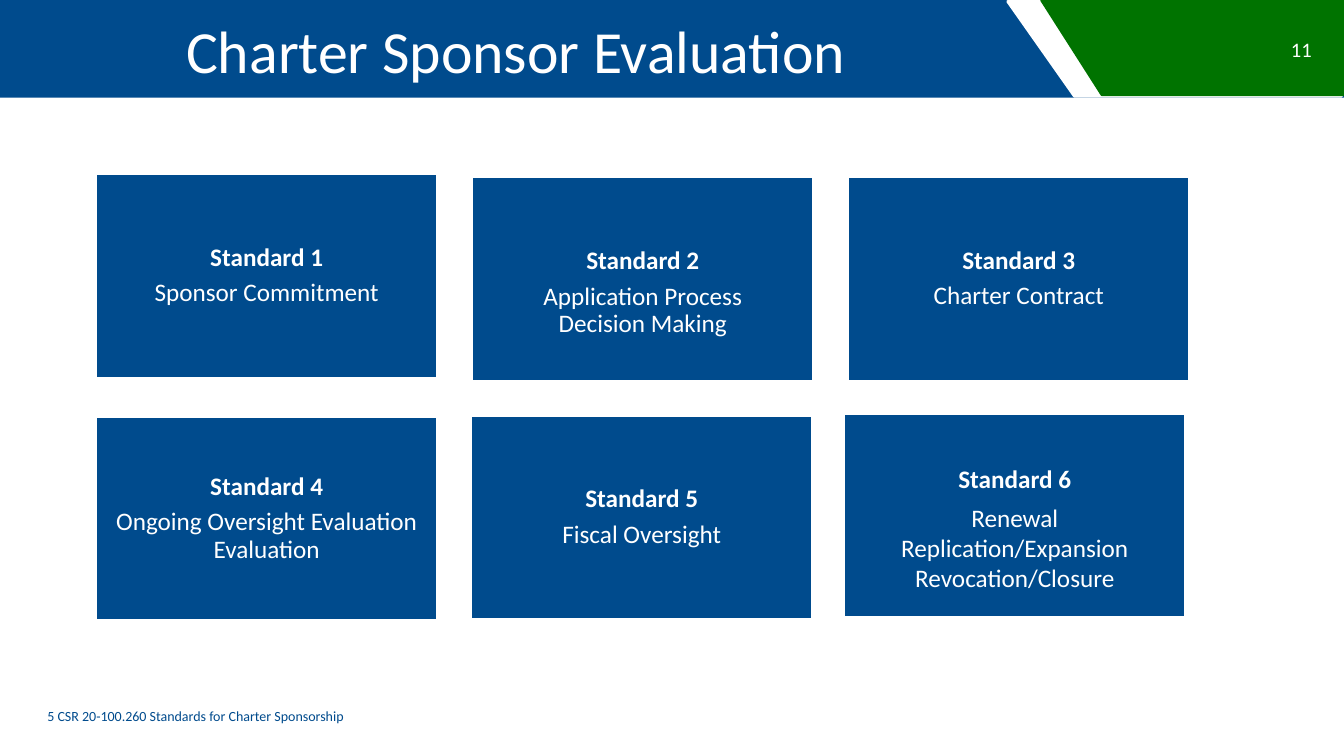
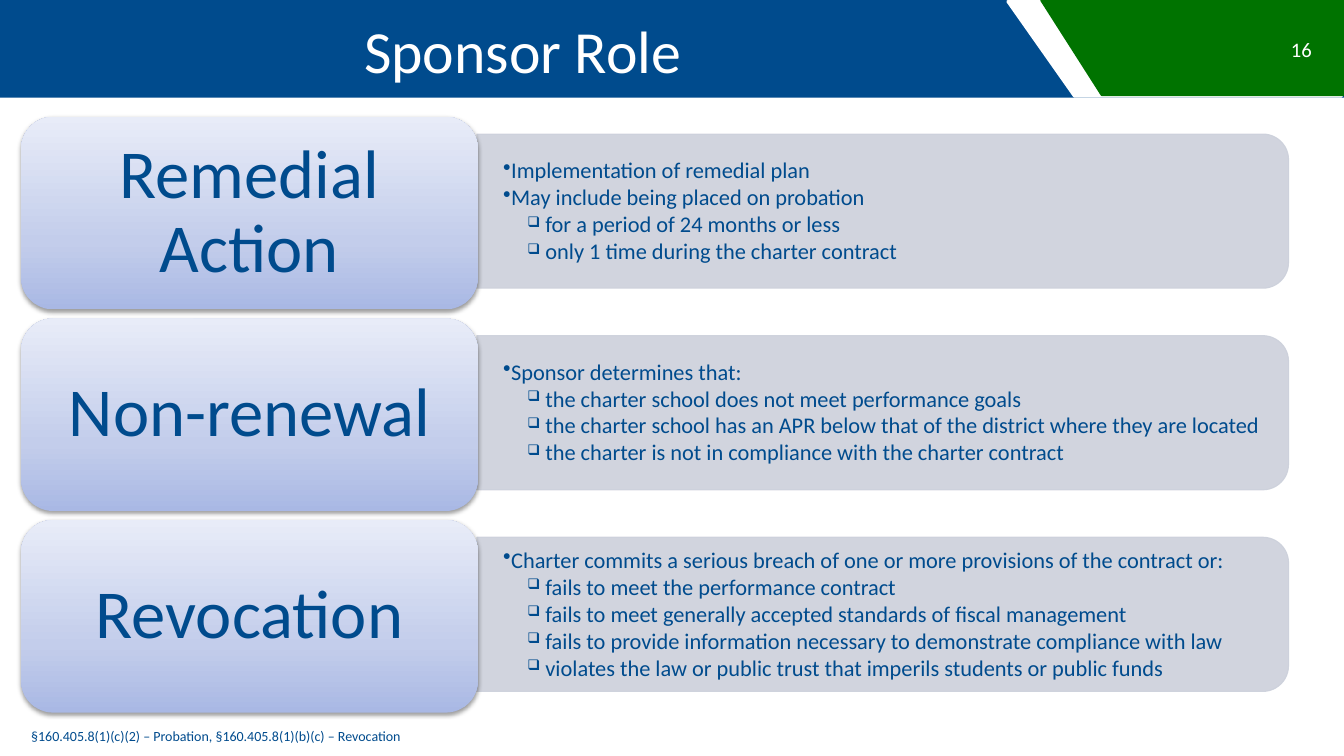
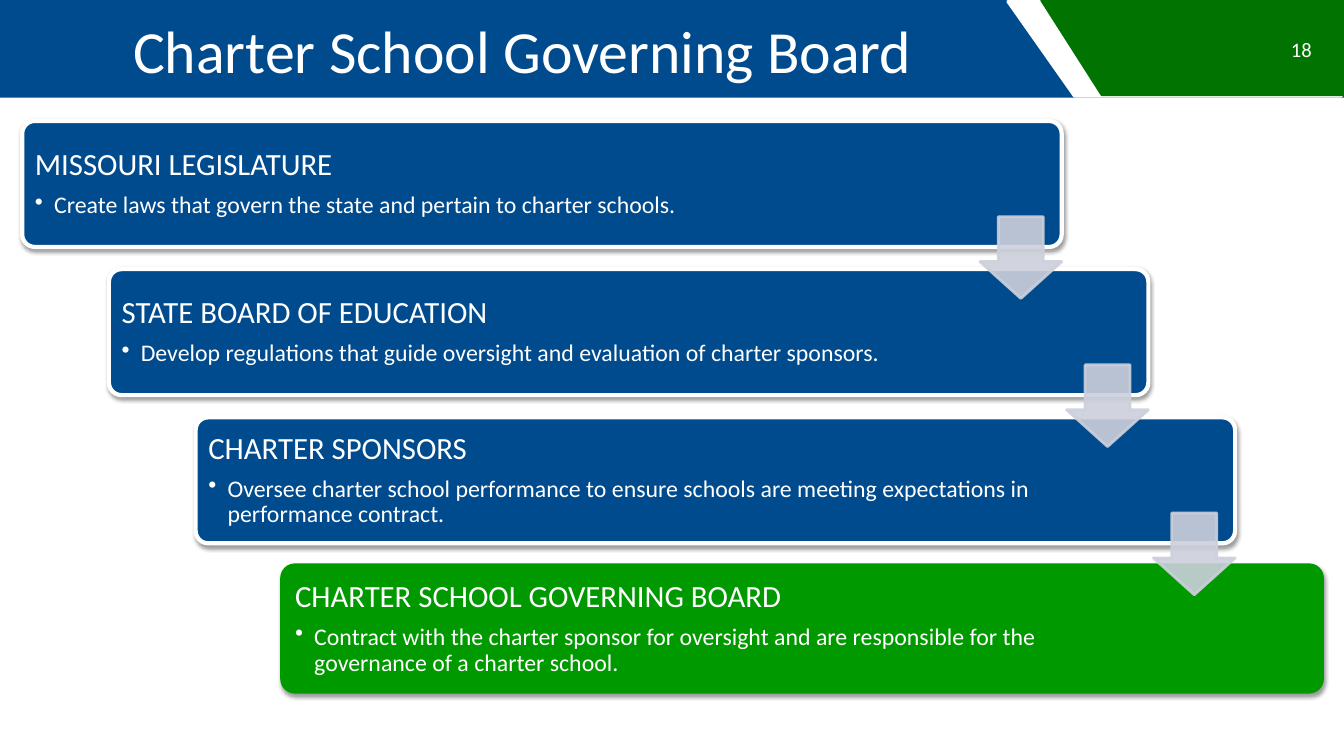
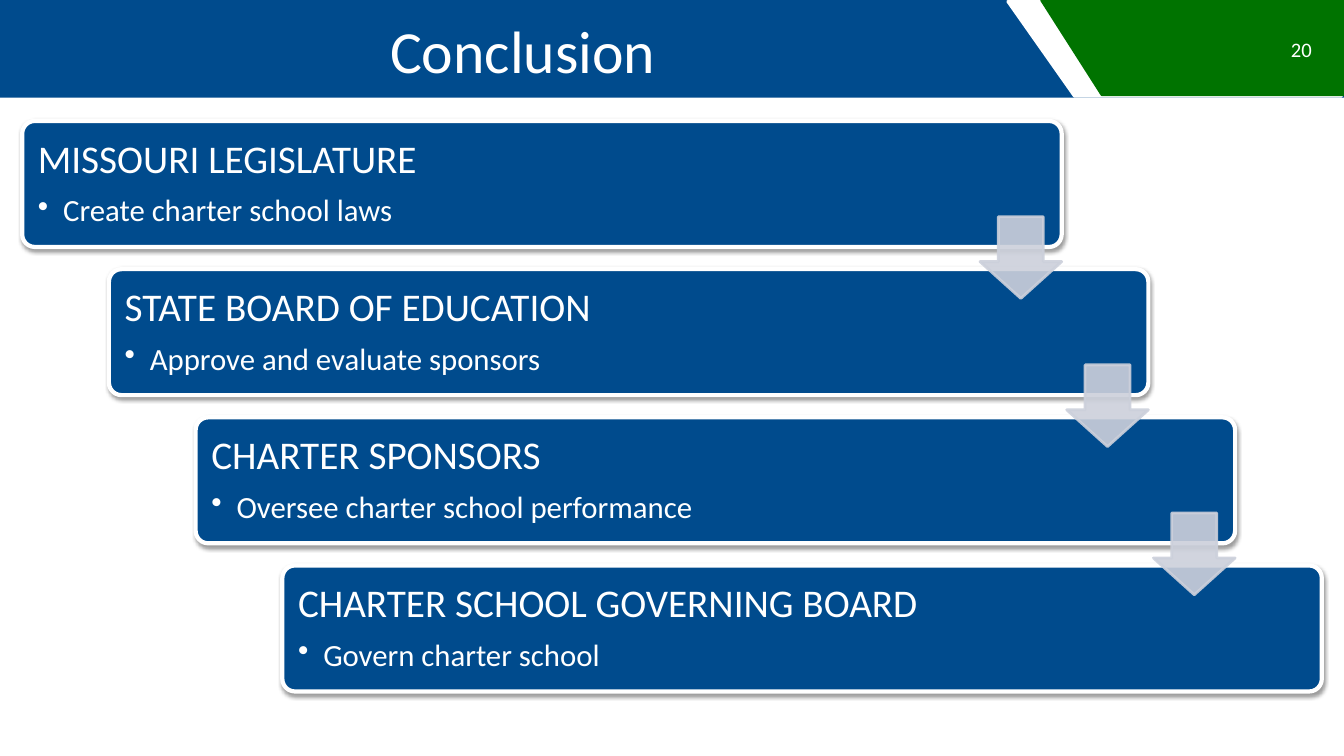
from dataclasses import dataclass

from lxml.etree import SubElement
from pptx import Presentation
from pptx.dml.color import RGBColor
from pptx.enum.shapes import MSO_SHAPE
from pptx.enum.text import MSO_ANCHOR, MSO_AUTO_SIZE, PP_ALIGN
from pptx.oxml.ns import qn
from pptx.util import Inches, Pt

# Shared look
FONT = "Calibri"
BLUE, WHITE, GREEN, BRIGHT_GREEN, GREY = "004B8D", "FFFFFF", "007300", "009900", "CCD0DB"
LABEL_GRADIENT = ((0, "A9B8E4"), (35, "C3CDEB"), (100, "E8ECF8"))
TITLE_AND_BODY, TITLE_ONLY = 1, 5


@dataclass(frozen=True)
class Box:
    left: float
    top: float
    width: float
    height: float

    def lengths(self) -> tuple:
        return tuple(Inches(v) for v in (self.left, self.top, self.width, self.height))


@dataclass(frozen=True)
class Standard:
    left: float
    top: float
    heading: str
    topics: tuple[str, ...]
    drop: float = 0  # extra room above the text
    spacing: float = 0.9


@dataclass(frozen=True)
class Outcome:
    label: str
    points: tuple[str, ...]
    details: tuple[str, ...]


@dataclass(frozen=True)
class Step:
    heading: str
    duty: str
    color: str = BLUE
    border: str = WHITE


@dataclass(frozen=True)
class StepStyle:
    heading_size: float
    duty_size: float
    inset: float
    hang: float


# Formatting helpers
def rgb(color: str) -> RGBColor:
    return RGBColor.from_string(color)


def set_alpha(fill, percent: int) -> None:
    color = fill._xPr.find(qn("a:solidFill"))[0]
    SubElement(color, qn("a:alpha")).set("val", str(percent * 1000))


def add_shadow(shape) -> None:
    effects = shape.element.spPr.find(qn("a:effectLst"))
    shadow = SubElement(effects, qn("a:outerShdw"), blurRad="40000", dist="20000",
                        dir="5400000", rotWithShape="0")
    color = SubElement(shadow, qn("a:srgbClr"), val="000000")
    SubElement(color, qn("a:alpha"), val="38000")


def fill_gradient(shape, stops: tuple) -> None:
    shape.fill.gradient()
    shape.fill.gradient_angle = 90
    stop_list = shape.element.spPr.find(qn("a:gradFill")).find(qn("a:gsLst"))
    for old in list(stop_list):
        stop_list.remove(old)
    for percent, color in stops:
        stop = SubElement(stop_list, qn("a:gs"), pos=str(percent * 1000))
        SubElement(stop, qn("a:srgbClr"), val=color)


def add_shape(slide, kind, box: Box, color: str, *, line: str | None = None,
              width: float = 2, alpha: int = 100, rotation: float = 0,
              adjustments: tuple[float, ...] = (), shadow: bool = False):
    shape = slide.shapes.add_shape(kind, *box.lengths())
    shape.shadow.inherit = False
    shape.rotation = rotation
    for i, value in enumerate(adjustments):
        shape.adjustments[i] = value
    shape.fill.solid()
    shape.fill.fore_color.rgb = rgb(color)
    if line:
        shape.line.color.rgb = rgb(line)
        shape.line.width = Pt(width)
    else:
        shape.line.fill.background()
    if alpha < 100:
        set_alpha(shape.fill, alpha)
        set_alpha(shape.line.fill, alpha)
    if shadow:
        add_shadow(shape)
    return shape


def set_frame(frame, *, insets: tuple | None = None, anchor=MSO_ANCHOR.MIDDLE):
    frame.word_wrap = True
    frame.auto_size = MSO_AUTO_SIZE.NONE
    frame.vertical_anchor = anchor
    if insets:
        (frame.margin_left, frame.margin_top,
         frame.margin_right, frame.margin_bottom) = (Inches(v) for v in insets)
    return frame


def write(frame, text: str, *, size: float, color: str = WHITE, bold: bool = False,
          align=PP_ALIGN.LEFT, spacing: float = 1, after: float = 0, level: int = 0,
          bullet: str = "", bullet_percent: int = 100,
          indent: float = 0, hang: float = 0) -> None:
    """Fill the first empty paragraph of the frame, or add one."""
    paragraph = frame.paragraphs[0]
    if paragraph.runs:
        paragraph = frame.add_paragraph()
    props = paragraph._p.get_or_add_pPr()
    props.set("marL", str(Inches(indent)))
    props.set("indent", str(-Inches(hang)))
    if bullet:
        SubElement(props, qn("a:buSzPct"), val=str(bullet_percent * 1000))
        SubElement(props, qn("a:buChar"), char=bullet)
    else:
        SubElement(props, qn("a:buNone"))
    paragraph.level = level
    paragraph.alignment = align
    paragraph.line_spacing = spacing
    paragraph.space_before = Pt(0)
    paragraph.space_after = Pt(after)
    run = paragraph.add_run()
    run.text = text
    run.font.name = FONT
    run.font.size = Pt(size)
    run.font.bold = bold
    run.font.color.rgb = rgb(color)


# Shared slide parts
def place(placeholder, box: Box) -> None:
    (placeholder.left, placeholder.top,
     placeholder.width, placeholder.height) = box.lengths()


def add_master_band(prs, slide) -> None:
    """Draw the header band and move it to the slide master."""
    slant = MSO_SHAPE.FLOWCHART_MANUAL_INPUT
    band = (
        add_shape(slide, MSO_SHAPE.RECTANGLE, Box(0, 0, 13.33, 0.97), BLUE),
        add_shape(slide, slant, Box(11.18, -1.17, 0.94, 3.31), WHITE, line=WHITE, rotation=270),
        add_shape(slide, slant, Box(11.36, -1.03, 0.94, 3), GREEN, line=GREEN, rotation=270),
    )
    for i, part in enumerate(band):
        part.element.nvSpPr.cNvPr.set("id", str(20 + i))
        prs.slide_master.shapes.element.insert(2 + i, part.element)


def add_slide(prs, layout: int, title: str, number: int):
    slide = prs.slides.add_slide(prs.slide_layouts[layout])
    heading = slide.shapes.title
    place(heading, Box(0.44, 0.06, 9.33, 0.86))
    write(set_frame(heading.text_frame), title, size=42.7,
          align=PP_ALIGN.CENTER, indent=0.16)
    page = slide.shapes.add_textbox(*Box(12.44, 0.29, 0.67, 0.4).lengths())
    write(set_frame(page.text_frame), str(number), size=14.7, align=PP_ALIGN.RIGHT)
    return slide


def add_citation(slide, text: str, box: Box, indent: float = 0) -> None:
    citation = slide.placeholders[1]
    place(citation, box)
    write(set_frame(citation.text_frame, anchor=MSO_ANCHOR.TOP), text,
          size=10, color=BLUE, indent=indent)


# Content parts
def add_standard(slide, standard: Standard) -> None:
    card = add_shape(slide, MSO_SHAPE.RECTANGLE,
                     Box(standard.left, standard.top, 3.39, 2.03), BLUE, line=WHITE)
    frame = set_frame(card.text_frame, insets=(0.07, 0.07 + standard.drop, 0.07, 0.07))
    write(frame, standard.heading, size=18, bold=True, align=PP_ALIGN.CENTER,
          spacing=0.9, after=6)
    for topic in standard.topics:
        write(frame, topic, size=18, align=PP_ALIGN.CENTER, spacing=standard.spacing)


def add_outcome(slide, outcome: Outcome, top: float) -> None:
    # The panel stands upright and is turned about its centre
    add_shape(slide, MSO_SHAPE.ROUND_2_SAME_RECTANGLE, Box(7.99, top - 3.09, 1.53, 8.05),
              GREY, line=GREY, width=0.75, alpha=90, rotation=90)
    details = slide.shapes.add_textbox(*Box(4.73, top + 0.25, 7.97, 1.38).lengths())
    frame = set_frame(details.text_frame, insets=(0.07, 0.03, 0.07, 0.03))
    for point in outcome.points:
        write(frame, point, size=16, color=BLUE, spacing=0.9, after=2,
              bullet="•", indent=0.27, hang=0.08)
    for detail in outcome.details:
        write(frame, detail, size=16, color=BLUE, spacing=0.9, after=2, level=1,
              bullet="❑", bullet_percent=65, indent=0.61, hang=0.18)
    label = add_shape(slide, MSO_SHAPE.ROUNDED_RECTANGLE, Box(0.21, top, 4.53, 1.91),
                      WHITE, shadow=True)
    fill_gradient(label, LABEL_GRADIENT)
    write(set_frame(label.text_frame, insets=(0.2, 0.1, 0.2, 0.1)), outcome.label,
          size=49, color=BLUE, align=PP_ALIGN.CENTER, spacing=0.9)


def add_staircase(slide, steps: tuple[Step, ...], style: StepStyle) -> None:
    corners = [(0.22 + 0.86 * i, 1.2 + 1.47 * i) for i in range(len(steps))]
    inset = style.inset
    for step, (left, top) in zip(steps, corners):
        card = add_shape(slide, MSO_SHAPE.ROUNDED_RECTANGLE, Box(left, top, 10.31, 1.25),
                         step.color, line=step.border, width=3,
                         adjustments=(0.1,), shadow=True)
        frame = set_frame(card.text_frame, insets=(inset, inset, 1.68 + inset, inset))
        write(frame, step.heading, size=style.heading_size, spacing=0.9,
              after=0.35 * style.heading_size)
        write(frame, step.duty, size=style.duty_size, spacing=0.9, level=1,
              bullet="•", indent=style.hang, hang=style.hang)
    for left, top in corners[:-1]:
        add_shape(slide, MSO_SHAPE.DOWN_ARROW, Box(left + 9.5, top + 0.95, 0.81, 0.81),
                  GREY, line=GREY, alpha=90, adjustments=(0.55, 0.45))


# Content
STANDARDS = (
    Standard(0.95, 1.72, "Standard 1", ("Sponsor Commitment",)),
    Standard(4.68, 1.75, "Standard 2", ("Application Process", "Decision Making"), 0.28),
    Standard(8.41, 1.75, "Standard 3", ("Charter Contract",)),
    Standard(0.95, 4.13, "Standard 4", ("Ongoing Oversight Evaluation", "Evaluation")),
    Standard(4.67, 4.12, "Standard 5", ("Fiscal Oversight",)),
    Standard(8.37, 4.1, "Standard 6",
             ("Renewal", "Replication/Expansion", "Revocation/Closure"), 0.28, 1),
)
OUTCOMES = (
    Outcome("Remedial Action",
            ("Implementation of remedial plan", "May include being placed on probation"),
            ("for a period of 24 months or less", "only 1 time during the charter contract")),
    Outcome("Non-renewal", ("Sponsor determines that:",),
            ("the charter school does not meet performance goals",
             "the charter school has an APR below that of the district where they are located",
             "the charter is not in compliance with the charter contract")),
    Outcome("Revocation",
            ("Charter commits a serious breach of one or more provisions of the contract or:",),
            ("fails to meet the performance contract",
             "fails to meet generally accepted standards of fiscal management",
             "fails to provide information necessary to demonstrate compliance with law",
             "violates the law or public trust that imperils students or public funds")),
)
BODIES = ("MISSOURI LEGISLATURE", "STATE BOARD OF EDUCATION", "CHARTER SPONSORS",
          "CHARTER SCHOOL GOVERNING BOARD")
DUTIES = (
    "Create laws that govern the state and pertain to charter schools.",
    "Develop regulations that guide oversight and evaluation of charter sponsors.",
    "Oversee charter school performance to ensure schools are meeting expectations in "
    "performance contract.",
    "Contract with the charter sponsor for oversight and are responsible for the "
    "governance of a charter school.",
)
SHORT_DUTIES = ("Create charter school laws", "Approve and evaluate sponsors",
                "Oversee charter school performance", "Govern charter school")


def main() -> None:
    prs = Presentation()
    prs.slide_width, prs.slide_height = Inches(13.33), Inches(7.5)

    # Standards
    evaluation = add_slide(prs, TITLE_AND_BODY, "Charter Sponsor Evaluation ", 11)
    add_master_band(prs, evaluation)
    for standard in STANDARDS:
        add_standard(evaluation, standard)
    add_citation(evaluation, "5 CSR 20-100.260 Standards for Charter Sponsorship",
                 Box(0.21, 6.97, 12.91, 0.42), indent=0.16)

    # Outcomes
    role = add_slide(prs, TITLE_AND_BODY, "Sponsor Role", 16)
    for i, outcome in enumerate(OUTCOMES):
        add_outcome(role, outcome, 1.16 + 2 * i)
    add_citation(role, "§160.405.8(1)(c)(2) – Probation, §160.405.8(1)(b)(c) – Revocation",
                 Box(0.21, 7.17, 10.78, 0.3))

    # Lines of authority, with the governing board in green
    board = add_slide(prs, TITLE_ONLY, "Charter School Governing Board", 18)
    steps = tuple(Step(*pair) for pair in zip(BODIES, DUTIES))
    highlighted = Step(BODIES[-1], DUTIES[-1], BRIGHT_GREEN, BRIGHT_GREEN)
    add_staircase(board, steps[:-1] + (highlighted,), StepStyle(22, 17, 0.09, 0.19))

    # Summary
    conclusion = add_slide(prs, TITLE_ONLY, "Conclusion", 20)
    add_staircase(conclusion, tuple(Step(*pair) for pair in zip(BODIES, SHORT_DUTIES)),
                  StepStyle(28, 22, 0.12, 0.25))

    prs.save("out.pptx")


if __name__ == "__main__":
    main()
